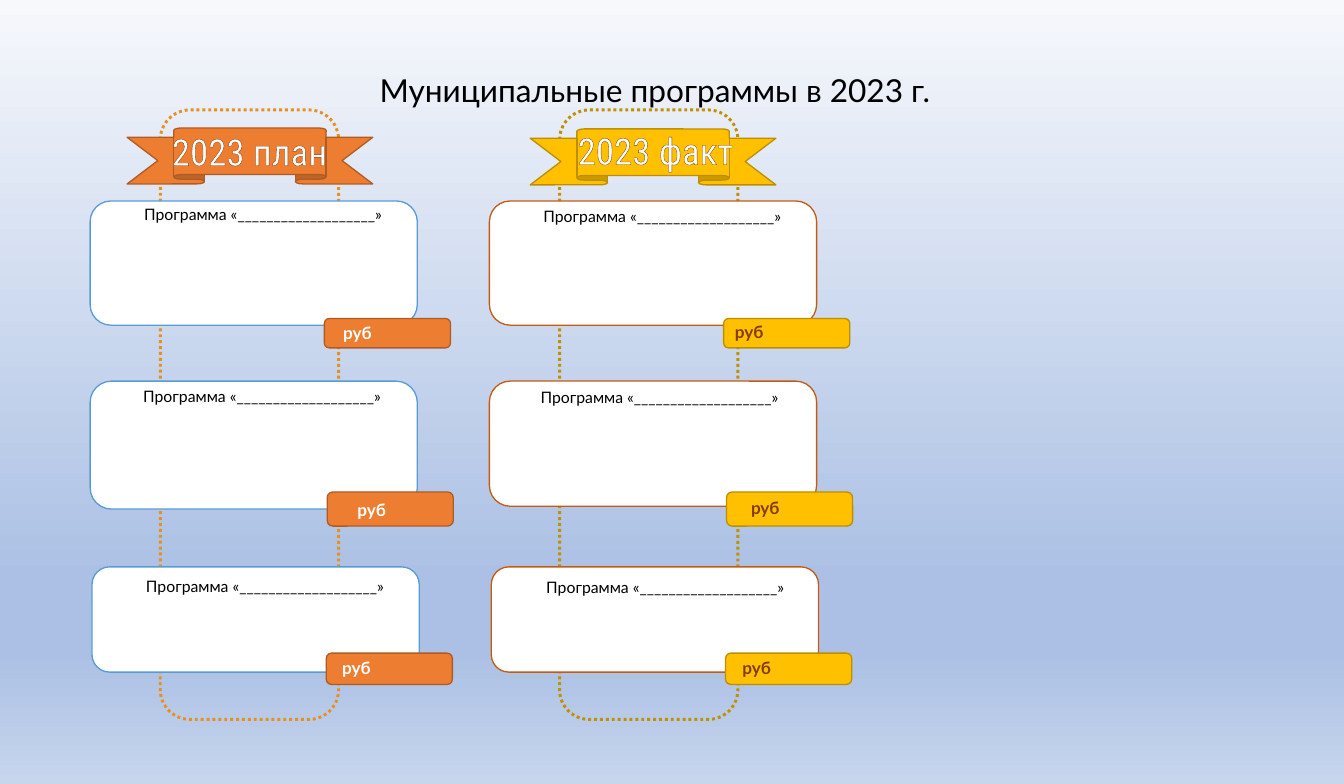
from dataclasses import dataclass

from lxml import etree
from pptx import Presentation
from pptx.dml.color import RGBColor
from pptx.enum.dml import MSO_LINE
from pptx.enum.shapes import MSO_SHAPE
from pptx.enum.text import MSO_ANCHOR, MSO_AUTO_SIZE, PP_ALIGN
from pptx.oxml.ns import qn
from pptx.util import Pt

PX = 9144
CARD = MSO_SHAPE.FLOWCHART_ALTERNATE_PROCESS
RIBBON = MSO_SHAPE.UP_RIBBON
DOTTED = MSO_LINE.ROUND_DOT
CENTER, JUSTIFY = PP_ALIGN.CENTER, PP_ALIGN.JUSTIFY
TOP = MSO_ANCHOR.TOP
GROW = MSO_AUTO_SIZE.SHAPE_TO_FIT_TEXT


@dataclass(frozen=True)
class Theme:
    black: str = "000000"
    white: str = "FFFFFF"
    brown: str = "843C0B"
    blue: str = "5B9BD5"
    rust: str = "C55A11"
    orange: str = "ED7D31"
    orange_edge: str = "AF5C24"
    orange_dots: str = "E6901F"
    gold: str = "FFC000"
    gold_edge: str = "BD8E00"
    gold_dots: str = "BF9000"
    backdrop: tuple = ((0, "F6F8FC"), (74, "ABC0E4"), (83, "ABC0E4"), (100, "C7D5ED"))
    body_font: str = "Lato"
    heading_font: str = "Roboto Condensed"
    title_size: int = 24
    heading_size: int = 28
    label_size: int = 12
    amount_size: int = 13


def apply(target, values):
    for name, value in values.items():
        setattr(target, name, value)


class Board:
    def __init__(self, page, theme):
        self.page = page
        self.theme = theme

    def place(self, item, *bounds):
        apply(item, dict(zip(("left", "top", "width", "height"), (n * PX for n in bounds))))

    def backdrop(self):
        fill = self.page.background.fill
        fill.gradient()
        fill.gradient_angle = 270
        stops = self.page.element.find(".//" + qn("a:gsLst"))
        for stop in list(stops):
            stops.remove(stop)
        for percent, color in self.theme.backdrop:
            stop = etree.SubElement(stops, qn("a:gs"), pos=str(percent * 1000))
            etree.SubElement(stop, qn("a:srgbClr"), val=color)

    def shape(self, kind, bounds, edge, fill=None, weight=1, dash=None):
        shape = self.page.shapes.add_shape(kind, *(n * PX for n in bounds))
        shape.shadow.inherit = False
        if fill:
            shape.fill.solid()
            shape.fill.fore_color.rgb = RGBColor.from_string(fill)
        else:
            shape.fill.background()
        shape.line.color.rgb = RGBColor.from_string(edge)
        apply(shape.line, {"width": Pt(weight), "dash_style": dash})
        return shape

    def set_words(self, box, words, size, color, font=None, bold=False, align=CENTER,
                  margin=0, indent=0, spacing=None):
        frame = box.text_frame
        apply(frame, {"word_wrap": True, "auto_size": GROW, "vertical_anchor": TOP})
        para = frame.paragraphs[0]
        apply(para, {"alignment": align, "line_spacing": spacing})
        properties = para._p.get_or_add_pPr()
        properties.set("marL", str(margin * PX))
        properties.set("indent", str(indent * PX))
        span = para.add_run()
        span.text = words
        apply(span.font, {"name": font or self.theme.body_font, "size": Pt(size), "bold": bold})
        span.font.color.rgb = RGBColor.from_string(color)
        return span

    def title(self, words, bounds):
        box = self.page.shapes.title
        self.place(box, *bounds)
        self.set_words(box, words, self.theme.title_size, self.theme.black, margin=50, spacing=1.15)

    def text(self, words, bounds, size, color, **style):
        box = self.page.shapes.add_textbox(*(n * PX for n in bounds))
        return self.set_words(box, words, size, color, **style)

    def heading(self, words, bounds):
        theme = self.theme
        span = self.text(words, bounds, theme.heading_size, theme.white, font=theme.heading_font)
        outline = etree.Element(qn("a:ln"), w=str(Pt(0.75)))
        fill = etree.SubElement(outline, qn("a:solidFill"))
        etree.SubElement(fill, qn("a:srgbClr"), val=theme.brown)
        span._r.get_or_add_rPr().insert(0, outline)

    def ribbon(self, left, top, fill, edge):
        ribbon = self.shape(RIBBON, (left, top, 259, 59), edge, fill)
        ribbon.adjustments[0] = 0.167
        ribbon.adjustments[1] = 0.62

    def program(self, card, tag, label, amount, colors):
        theme = self.theme
        self.shape(CARD, card, colors["card"], theme.white)
        self.shape(CARD, tag, colors["edge"], colors["fill"])
        self.text("Программа «___________________»", (*label, 357, 30),
                  theme.label_size, theme.black, indent=20)
        self.text("руб", (*amount, 160, 32), theme.amount_size, colors["amount"],
                  bold=True, align=JUSTIFY, indent=20)

    def column(self, shift, heading, heading_bounds, ribbon, colors, rows):
        self.shape(CARD, (169 + shift, 116, 188, 643), colors["dots"], weight=2.25, dash=DOTTED)
        self.ribbon(*ribbon, colors["fill"], colors["edge"])
        self.heading(heading, heading_bounds)
        for (card_left, card_top, tag_left, tag_top, tag_height), (height, label, amount) in zip(ROWS, rows):
            self.program((card_left + shift, card_top, 345, height),
                         (tag_left + shift, tag_top, 133, tag_height), label, amount, colors)


ROWS = (
    (95, 212, 342, 336, 31),
    (95, 402, 345, 519, 36),
    (97, 598, 344, 689, 33),
)
PLAN_ROWS = (
    (131, (89, 211), (332, 335)),
    (135, (88, 403), (347, 522)),
    (111, (91, 603), (331, 688)),
)
FACT_ROWS = (
    (131, (510, 213), (745, 334)),
    (132, (507, 404), (762, 520)),
    (111, (513, 605), (753, 688)),
)


def main():
    theme = Theme()
    deck = Presentation()
    apply(deck, {"slide_width": 1417 * PX, "slide_height": 827 * PX})
    board = Board(deck.slides.add_slide(deck.slide_layouts[5]), theme)
    board.backdrop()
    board.title("Муниципальные программы в 2023 г.", (97, 64, 1137, 54))
    plan = {"card": theme.blue, "fill": theme.orange, "edge": theme.orange_edge,
            "dots": theme.orange_dots, "amount": theme.white}
    fact = {"card": theme.rust, "fill": theme.gold, "edge": theme.gold_edge,
            "dots": theme.gold_dots, "amount": theme.brown}
    board.column(0, "2023 план", (165, 131, 196, 57), (134, 135), plan, PLAN_ROWS)
    board.column(421, "2023 факт", (588, 130, 206, 57), (559, 136), fact, FACT_ROWS)
    deck.save("out.pptx")


if __name__ == "__main__":
    main()
